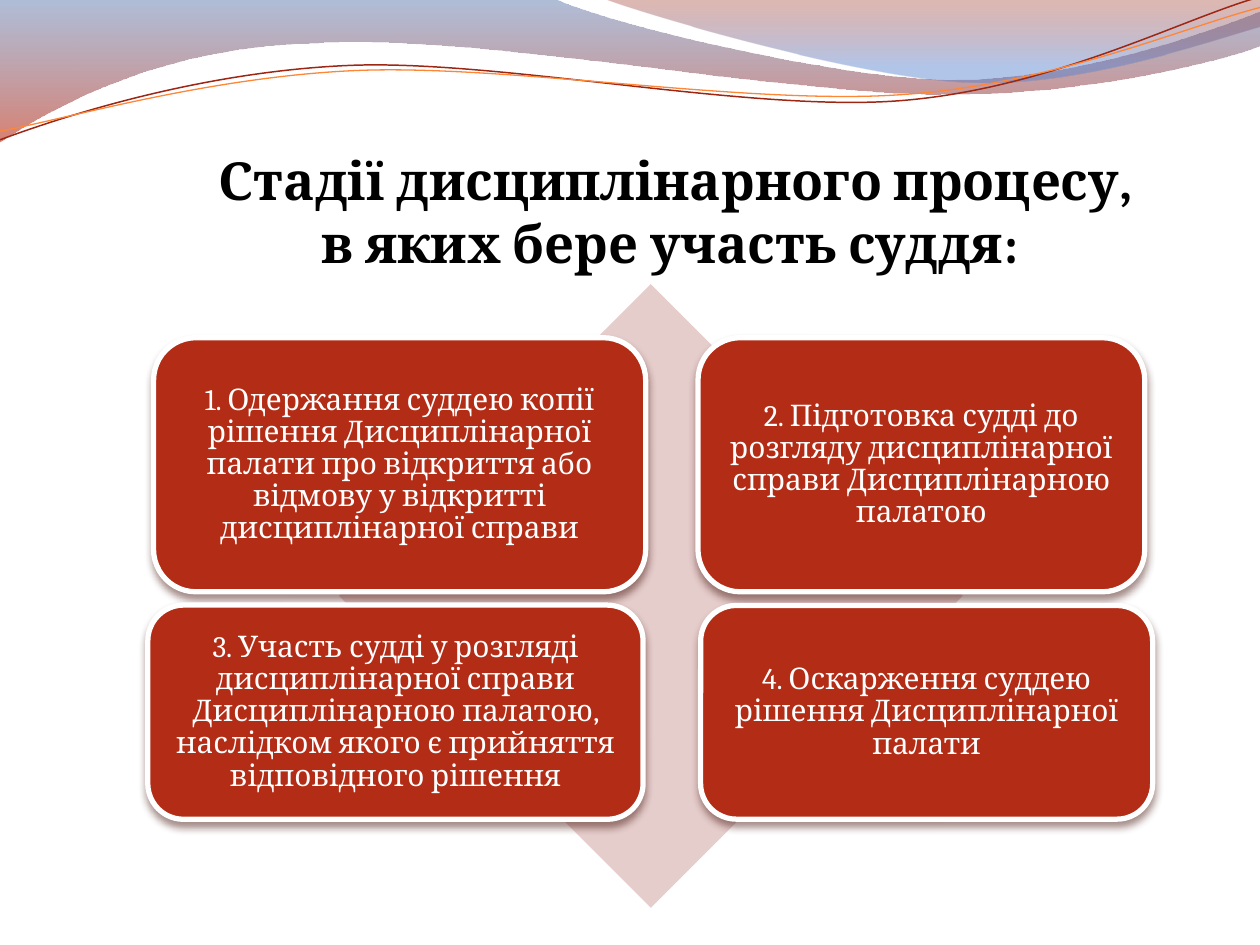
import math

from lxml import etree
from pptx import Presentation
from pptx import util as u
from pptx.dml.color import RGBColor
from pptx.enum import shapes, text
from pptx.oxml.ns import qn

COLOURS = {
    "title": "000000", "card": "B32C16", "card text": "FFFFFF", "border": "FFFFFF",
    "shadow": "400E06", "diamond": "E5CDCC", "blue": "4F6EA8", "red": "B61A00",
    "dark red": "951500", "light blue": "5681D1", "red line": "9E2713",
    "orange line": "FE8637",
}

# Each step is a line to (x, y) or a cubic curve (x1, y1, x2, y2, x, y), in points.
LEFT_WAVE = [
    (0, 0), (316.8, -0.7), (342.7, 12.2, 478.1, 45.4, 545.8, 45.4),
    (614.2, 45.4, 689.8, 18.7, 720, 6.5), (720.7, 25.9),
    (707.8, 31.7, 626.4, 54.7, 537.1, 54), (447.8, 54, 275, 20.2, 185, 24.5),
    (92.9, 25.9, 33.1, 59.8, -0.7, 81.4),
]
RIGHT_WAVE = [
    (344.9, -0.7), (366.5, 7.9, 491, 44.6, 553.7, 46.8),
    (616.3, 49.7, 691.9, 23, 720, 15.1), (720, 0),
]
RED_LINE = [
    (0, 79.9), (34.6, 67, 113.8, 41, 199.4, 37.4),
    (284.4, 33.8, 427, 64.1, 513.4, 57.6), (599.8, 51.1, 675.4, 10.8, 718.6, -1.4),
]
ORANGE_LINE = [
    (0, 74.9), (33.8, 69.1, 118.1, 43.9, 203.8, 40.3),
    (290.2, 36.7, 429.8, 60.5, 516.2, 54), (601.9, 48.2, 677.5, 15.1, 720, 4.3),
]
LINE_TILT = -2.7

CARDS = [
    ((87.8, 193, 281.2, 145.2), "1. Одержання суддею копії рішення Дисциплінарної палати "
     "про відкриття або відмову у відкритті дисциплінарної справи"),
    ((398.9, 193, 255.3, 145.2), "2. Підготовка судді до розгляду дисциплінарної справи "
     "Дисциплінарною палатою"),
    ((84.5, 345.8, 283, 122.4), "3. Участь судді у розгляді дисциплінарної справи "
     "Дисциплінарною палатою, наслідком якого є прийняття відповідного рішення"),
    ((400.4, 346, 258.3, 122.1), "4. Оскарження суддею рішення Дисциплінарної палати"),
]


def colour(name):
    return RGBColor.from_string(COLOURS[name])


def turn(steps, degrees, centre):
    """Rotate every point of the steps clockwise about the centre."""
    cos, sin = math.cos(math.radians(degrees)), math.sin(math.radians(degrees))
    turned = []
    for step in steps:
        points = []
        for x, y in zip(step[::2], step[1::2]):
            dx, dy = x - centre[0], y - centre[1]
            points += [centre[0] + dx * cos - dy * sin, centre[1] + dx * sin + dy * cos]
        turned.append(tuple(points))
    return turned


def write(shape, words, size, color, bold=False, anchor=text.MSO_ANCHOR.MIDDLE,
          spacing=1.0, insets=(5, 5, 5, 5), font="Cambria"):
    frame = shape.text_frame
    frame.word_wrap = True
    frame.vertical_anchor = anchor
    (frame.margin_left, frame.margin_top,
     frame.margin_right, frame.margin_bottom) = map(u.Pt, insets)
    para = frame.paragraphs[0]
    para.alignment = text.PP_ALIGN.CENTER
    para.line_spacing = spacing
    span = para.add_run()
    span.text = words
    span.font.name = font
    span.font.size = u.Pt(size)
    span.font.bold = bold
    span.font.color.rgb = colour(color)


class Painter:
    """Holds the current page and the style of its elements."""
    card_size = 17
    title_size = 30

    def __init__(self, page):
        self.page = page

    def outline(self, steps, close):
        """Build the outline through the end points, then bend its segments into curves."""
        ends = [(u.Pt(step[-2]), u.Pt(step[-1])) for step in steps]
        builder = self.page.shapes.build_freeform(*ends[0], scale=1.0)
        builder.add_line_segments(ends[1:], close=close)
        shape = builder.convert_to_shape()
        shape.shadow.inherit = False
        segments = list(shape.element.spPr.iter(qn("a:lnTo")))
        for segment, step in zip(segments, steps[1:]):
            if len(step) == 6:
                segment.tag = qn("a:cubicBezTo")
                for i in (0, 1):
                    x, y = step[2 * i:2 * i + 2]
                    handle = etree.Element(qn("a:pt"), x=str(u.Pt(x) - shape.left),
                                           y=str(u.Pt(y) - shape.top))
                    segment.insert(i, handle)
        return shape

    def wave(self, steps, stops):
        """Add a filled band; each stop is (position, colour name, opacity in percent)."""
        shape = self.outline(steps, True)
        shape.line.fill.background()
        shape.fill.gradient()
        shape.fill.gradient_angle = 270
        for stop, (position, name, _) in zip(shape.fill.gradient_stops, stops):
            stop.position = position
            stop.color.rgb = colour(name)
        tints = shape.element.spPr.iter(qn("a:srgbClr"))
        for tint, (_, _, opacity) in zip(tints, stops):
            etree.SubElement(tint, qn("a:alpha"), val=str(opacity * 1000))

    def curve(self, steps, name, width, centre):
        shape = self.outline(turn(steps, -LINE_TILT, centre), False)
        shape.rotation = LINE_TILT
        shape.fill.background()
        shape.line.color.rgb = colour(name)
        shape.line.width = u.Pt(width)

    def shape(self, kind, place, fill):
        shape = self.page.shapes.add_shape(kind, *map(u.Pt, place))
        shape.shadow.inherit = False
        shape.fill.solid()
        shape.fill.fore_color.rgb = colour(fill)
        shape.line.fill.background()
        return shape

    def diamond(self, place):
        self.shape(shapes.MSO_SHAPE.DIAMOND, place, "diamond")

    def card(self, place, words):
        card = self.shape(shapes.MSO_SHAPE.ROUNDED_RECTANGLE, place, "card")
        card.line.color.rgb = colour("border")
        card.line.width = u.Pt(3)
        effects = card.element.spPr.find(qn("a:effectLst"))
        shadow = etree.SubElement(effects, qn("a:outerShdw"), blurRad=str(u.Pt(4.5)),
                                  dist=str(u.Pt(3)), dir="5400000", rotWithShape="0")
        tint = etree.SubElement(shadow, qn("a:srgbClr"), val=COLOURS["shadow"])
        etree.SubElement(tint, qn("a:alpha"), val="48000")
        write(card, words, self.card_size, "card text", spacing=0.9, insets=(0, 0, 0, 0))

    def title(self, place, words):
        box = self.page.shapes.add_textbox(*map(u.Pt, place))
        write(box, words, self.title_size, "title", bold=True,
              anchor=text.MSO_ANCHOR.BOTTOM, insets=(0, 3.6, 0, 0))


def main():
    deck = Presentation()
    deck.slide_width, deck.slide_height = u.Pt(720), u.Pt(540)
    painter = Painter(deck.slides.add_slide(deck.slide_layouts[6]))
    painter.wave(LEFT_WAVE, [(0, "blue", 45), (1, "red", 55)])
    painter.wave(RIGHT_WAVE, [(0, "dark red", 30), (0.8, "light blue", 45)])
    painter.curve(RED_LINE, "red line", 0.85, (359.3, 41.4))
    painter.curve(ORANGE_LINE, "orange line", 0.75, (359.6, 42.5))
    painter.title((110.6, 83.1, 544.3, 73.4),
                  " Стадії дисциплінарного процесу, в яких бере участь суддя:")
    painter.diamond((193.7, 162.3, 356.4, 356.4))
    for place, words in CARDS:
        painter.card(place, words)
    deck.save("out.pptx")


if __name__ == "__main__":
    main()
